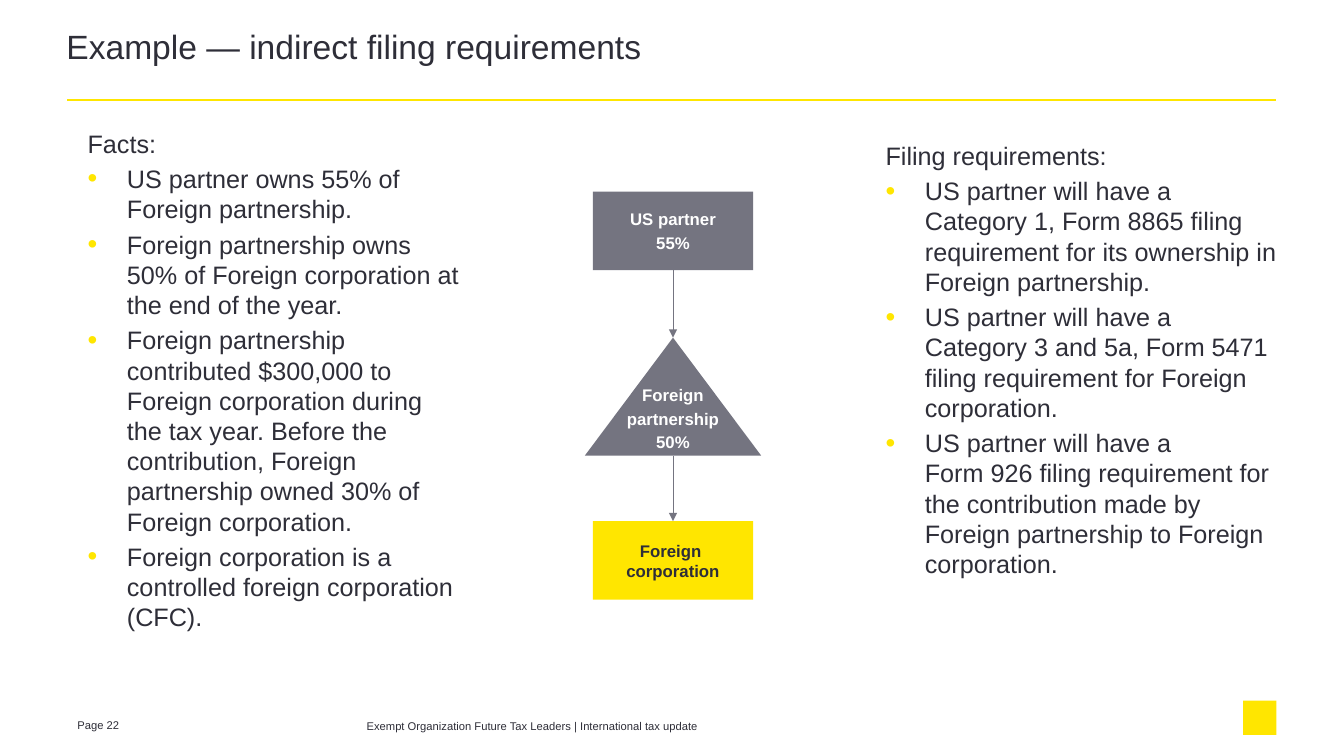
from lxml.etree import SubElement
from pptx import Presentation
from pptx.dml.color import RGBColor
from pptx.enum.shapes import MSO_CONNECTOR, MSO_SHAPE
from pptx.enum.text import MSO_ANCHOR, PP_ALIGN
from pptx.oxml.ns import qn
from pptx.util import Inches, Pt

YELLOW = RGBColor(0xFF, 0xE6, 0x00)
GREY = RGBColor(0x74, 0x74, 0x80)
DARK = RGBColor(0x2E, 0x2E, 0x38)
WHITE = RGBColor(0xFF, 0xFF, 0xFF)

CHART_CENTRE = 6.68
BOX_SIZE = (1.59, 0.78)
TRIANGLE_SIZE = (1.75, 1.17)

FACTS = [
    "US partner owns 55% of Foreign partnership.",
    "Foreign partnership owns 50% of Foreign corporation at the end of the year.",
    "Foreign partnership contributed $300,000 to Foreign corporation during the tax year. "
    "Before the contribution, Foreign partnership owned 30% of Foreign corporation.",
    "Foreign corporation is a controlled foreign corporation (CFC).",
]
REQUIREMENTS = [
    "US partner will have a \vCategory 1, Form 8865 filing requirement "
    "for its ownership in Foreign partnership.",
    "US partner will have a \vCategory 3 and 5a, Form 5471 filing requirement "
    "for Foreign corporation.",
    "US partner will have a \vForm 926 filing requirement for the contribution "
    "made by Foreign partnership to Foreign corporation.",
]


def apply_format(target, values):
    for name, value in values.items():
        setattr(target, name, value)


class SlideBuilder:
    """Holds the style and the current slide."""

    font_name = "Arial"

    def __init__(self, slide):
        self.slide = slide

    def fill_text(self, frame, lines, size, color, margins=(0, 0, 0, 0), bold=False,
                  bulleted=False, wrap=True, anchor=MSO_ANCHOR.TOP,
                  align=PP_ALIGN.LEFT, spacing=None):
        left, top, right, bottom = map(Inches, margins)
        apply_format(frame, {"margin_left": left, "margin_top": top,
                             "margin_right": right, "margin_bottom": bottom,
                             "word_wrap": wrap, "vertical_anchor": anchor})
        for index, line in enumerate(lines):
            paragraph = frame.add_paragraph() if index else frame.paragraphs[0]
            paragraph.text = line
            apply_format(paragraph, {"alignment": align, "line_spacing": spacing})
            if index:
                paragraph.space_before = Pt(size * 0.2)
                if bulleted:
                    self.add_bullet(paragraph)
            apply_format(paragraph.font,
                         {"name": self.font_name, "size": Pt(size), "bold": bold})
            paragraph.font.color.rgb = color

    def add_bullet(self, paragraph):
        properties = paragraph._p.get_or_add_pPr()
        properties.set("marL", str(Inches(0.39)))
        properties.set("indent", str(-Inches(0.39)))
        color = SubElement(properties, qn("a:buClr"))
        SubElement(color, qn("a:srgbClr"), val=str(YELLOW))
        SubElement(properties, qn("a:buSzPct"), val="110000")
        SubElement(properties, qn("a:buFont"), typeface=self.font_name)
        SubElement(properties, qn("a:buChar"), char="•")

    def text(self, place, lines, size, **options):
        box = self.slide.shapes.add_textbox(*map(Inches, place))
        self.fill_text(box.text_frame, lines, size, DARK, **options)

    def shape(self, kind, place, fill):
        shape = self.slide.shapes.add_shape(kind, *map(Inches, place))
        shape.shadow.inherit = False
        shape.fill.solid()
        shape.fill.fore_color.rgb = fill
        shape.line.fill.background()
        return shape

    def entity(self, kind, top, size, lines, fill, color,
               margins=(0.04, 0.05, 0.04, 0.05), wrap=True):
        place = (CHART_CENTRE - size[0] / 2, top, *size)
        shape = self.shape(kind, place, fill)
        self.fill_text(shape.text_frame, lines, 12, color, margins=margins, bold=True,
                       wrap=wrap, anchor=MSO_ANCHOR.MIDDLE, align=PP_ALIGN.CENTER)
        return shape

    def line(self, start, end, color, width):
        connector = self.slide.shapes.add_connector(
            MSO_CONNECTOR.STRAIGHT, *map(Inches, (*start, *end)))
        connector.line.color.rgb = color
        connector.line.width = Pt(width)
        SubElement(connector._element.spPr, qn("a:effectLst"))
        return connector

    def arrow(self, upper, lower):
        connector = self.line((0, 0), (0, 0), GREY, 0.5)
        connector.begin_connect(upper, 2)
        connector.end_connect(lower, 0)
        SubElement(connector.line._get_or_add_ln(), qn("a:tailEnd"), type="triangle")


def main():
    presentation = Presentation()
    presentation.slide_width = Inches(13.34)
    presentation.slide_height = Inches(7.5)
    builder = SlideBuilder(presentation.slides.add_slide(presentation.slide_layouts[6]))

    # Footer and mark
    footer_margins = (0.1, 0.05, 0.1, 0.05)
    builder.shape(MSO_SHAPE.RECTANGLE, (12.34, 6.95, 0.33, 0.34), YELLOW)
    builder.text((0.67, 7.08, 0.73, 0.2), ["Page 22"], 8, margins=footer_margins)
    builder.text((3.54, 7.09, 6.67, 0.24),
                 ["Exempt Organization Future Tax Leaders | International tax update"],
                 8, margins=footer_margins)

    # Title and rule
    builder.line((0.67, 0.99), (12.67, 0.99), YELLOW, 1.5)
    builder.text((0.66, 0.32, 9, 0.65), ["Example — indirect filing requirements"],
                 24, spacing=0.85)

    # Text columns
    builder.text((0.87, 1.27, 3.7, 5.09), ["Facts:", *FACTS], 18, bulleted=True)
    builder.text((8.79, 1.39, 3.88, 4.42), ["Filing requirements:", *REQUIREMENTS],
                 18, bulleted=True)

    # Ownership chart
    partner = builder.entity(MSO_SHAPE.RECTANGLE, 1.9, BOX_SIZE,
                             ["US partner", "55%"], GREY, WHITE)
    partnership = builder.entity(MSO_SHAPE.FLOWCHART_EXTRACT, 3.35, TRIANGLE_SIZE,
                                 ["Foreign", "partnership", "50%"], GREY, WHITE,
                                 margins=(0.1, 0, 0.1, 0.15), wrap=False)
    corporation = builder.entity(MSO_SHAPE.RECTANGLE, 5.17, BOX_SIZE,
                                 ["Foreign \vcorporation"], YELLOW, DARK)
    builder.arrow(partner, partnership)
    builder.arrow(partnership, corporation)

    presentation.save("out.pptx")


if __name__ == "__main__":
    main()
